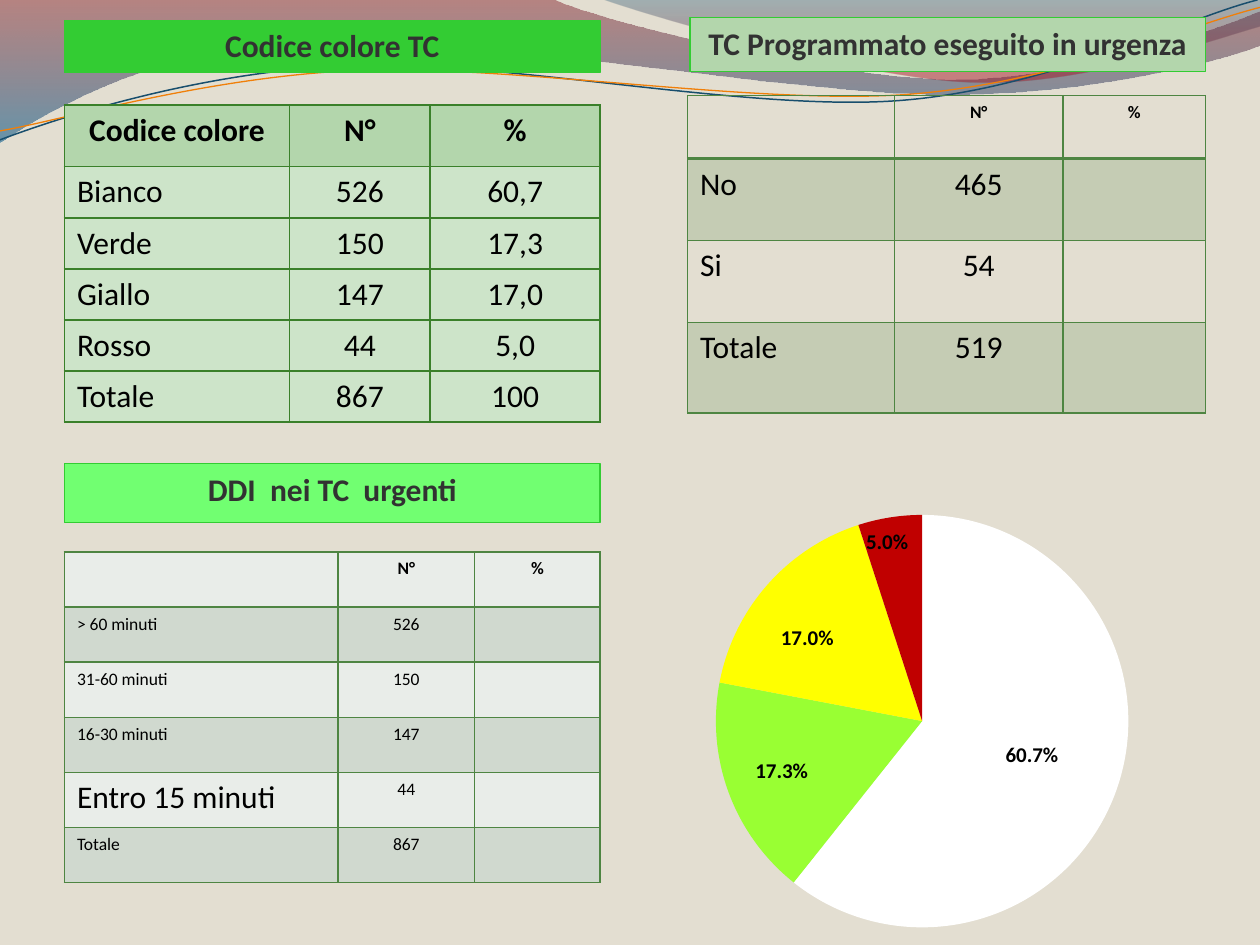
from lxml.etree import SubElement
from pptx import Presentation
from pptx.chart.data import CategoryChartData
from pptx.dml.color import RGBColor
from pptx.enum.chart import XL_CHART_TYPE as ChartType, XL_LABEL_POSITION as LabelPos
from pptx.enum.shapes import MSO_SHAPE as Shape
from pptx.enum.text import MSO_ANCHOR as Anchor, PP_ALIGN as Align
from pptx.oxml import parse_xml
from pptx.oxml.ns import nsdecls, qn
from pptx.util import Cm, Pt

THEME = dict(
    font="Calibri", chart_font="Cambria", large=18, label=12, small=10,
    background="E3DED1", text="000000", heading="323232", heading_line="33CC33",
    header="B3D6AC", body="CDE4C9", code_border="3A802A", border="4E8542",
    light="E9EDE9", dark="D0D9CF", blue="184E6D", orange="F07F09",
)

# Waves in cm: a pair is a corner, six numbers are a Bézier curve.
BANDS = [
    ([(0, 0), (11.18, 0), (12.09, 0.43, 16.87, 1.6, 19.25, 1.6),
      (21.67, 1.6, 24.33, 0.66, 25.4, 0.23), (25.4, 0.91),
      (24.97, 1.12, 22.1, 1.93, 18.95, 1.9), (15.8, 1.9, 9.7, 0.71, 6.53, 0.86),
      (3.28, 0.89, 1.17, 2.11, 0, 2.87)],
     [(0, "7E1621", 45), (100, "005689", 55)]),
    ([(12.17, 0), (12.93, 0.28, 17.32, 1.57, 19.53, 1.65),
      (21.74, 1.75, 24.41, 0.81, 25.4, 0.53), (25.4, 0)],
     [(0, "094467", 30), (80, "A10F1F", 45)]),
]
STRANDS = [
    ([(0, 2.82), (1.22, 2.36, 4.01, 1.45, 7.04, 1.32),
      (10.03, 1.19, 15.06, 2.26, 18.11, 2.03), (21.16, 1.8, 23.83, 0.38, 25.35, 0)],
     THEME["blue"], 0.85),
    ([(0, 2.64), (1.19, 2.44, 4.17, 1.55, 7.19, 1.42),
      (10.24, 1.3, 15.16, 2.11, 18.21, 1.91), (21.23, 1.7, 23.9, 0.53, 25.4, 0.15)],
     THEME["orange"], 0.75),
]
HEADINGS = [
    ("TC Programmato eseguito in urgenza", (13.91, 0.35, 10.39, 1.1), THEME["header"]),
    ("Codice colore TC", (1.3, 0.41, 10.8, 1.05), "33CC33"),
    ("DDI  nei TC  urgenti", (1.3, 9.35, 10.8, 1.19), "71FF71"),
]
# Fills are (colour, opacity %) for the header, odd and even rows.
CLEAR, TINT = (None, 0), (THEME["border"], 20)
LIGHT, DARK, BODY = (THEME["light"], 100), (THEME["dark"], 100), (THEME["body"], 100)
TABLES = [
    dict(at=(13.86, 1.93), cols=[4.17, 3.4, 2.87], heights=[1.27, 1.65, 1.65, 1.83],
         fills=(CLEAR, TINT, CLEAR), border=THEME["border"], rule=2,
         sizes=(THEME["small"], THEME["large"]),
         rows=[("", "N°", "%"), ("No", "465", ""), ("Si", "54", ""), ("Totale", "519", "")]),
    dict(at=(1.3, 2.12), cols=[4.54, 2.83, 3.43], heights=[1.24] + [1.03] * 5,
         fills=((THEME["header"], 100), BODY, BODY), border=THEME["code_border"], rule=1,
         sizes=(THEME["large"], THEME["large"]),
         rows=[("Codice colore", "N°", "%"), ("Bianco", "526", "60,7"),
               ("Verde", "150", "17,3"), ("Giallo", "147", "17,0"),
               ("Rosso", "44", "5,0"), ("Totale", "867", "100")]),
    dict(at=(1.3, 11.13), cols=[5.51, 2.76, 2.53], heights=[1.11] * 6,
         fills=(LIGHT, DARK, LIGHT), border=THEME["border"], rule=1,
         sizes=(THEME["small"], THEME["small"]), enlarged="Entro 15 minuti",
         rows=[("", "N°", "%"), ("> 60 minuti", "526", ""), ("31-60 minuti", "150", ""),
               ("16-30 minuti", "147", ""), ("Entro 15 minuti", "44", ""),
               ("Totale", "867", "")]),
]
PIE_AT = (12.29, 9.35, 12.6, 9.7)
PIE_PLOT = dict(x=0.17, y=0.1, w=0.66, h=0.87)
# Category, share, colour, label position, label offset as a part of the chart
SLICES = [
    ("1", 0.607, "FFFFFF", LabelPos.CENTER, (0.02, 0)),
    ("2", 0.173, "99FF33", LabelPos.CENTER, (-0.07, 0.03)),
    ("3", 0.17, "FFFF00", LabelPos.CENTER, (-0.06, -0.03)),
    ("4", 0.05, "C00000", LabelPos.INSIDE_END, (-0.04, 0.01)),
]


def rgb(value):
    return RGBColor.from_string(value)


def style_font(font, size, color=THEME["text"], bold=False, name=THEME["font"]):
    font.size, font.bold, font.name = Pt(size), bold, name
    font.color.rgb = rgb(color)


def write(tf, text, align=Align.LEFT, **fmt):
    p = tf.paragraphs[0]
    p.alignment = align
    r = p.add_run()
    r.text = text
    style_font(r.font, **fmt)


def add_wave(s, segments, close):
    """Build through corners and control points, then join the latter into curves."""
    points = [(Cm(seg[k]), Cm(seg[k + 1])) for seg in segments for k in range(0, len(seg), 2)]
    builder = s.shapes.build_freeform(*points[0])
    builder.add_line_segments(points[1:], close=close)
    sp = builder.convert_to_shape()
    sp.shadow.inherit = False
    sp.fill.background()
    lines = iter(list(sp._element.iter(qn("a:lnTo"))))
    for seg in segments[1:]:
        line = next(lines)
        if len(seg) == 6:
            line.tag = qn("a:cubicBezTo")
            for _ in range(2):
                extra = next(lines)
                line.append(extra[0])
                extra.getparent().remove(extra)
    return sp


def add_band(s, segments, stops):
    sp = add_wave(s, segments, True)
    sp.line.fill.background()
    marks = "".join(
        f'<a:gs pos="{pos * 1000}"><a:srgbClr val="{color}">'
        f'<a:alpha val="{alpha * 1000}"/></a:srgbClr></a:gs>' for pos, color, alpha in stops)
    no_fill = sp._element.spPr.find(qn("a:noFill"))
    no_fill.getparent().replace(no_fill, parse_xml(
        f'<a:gradFill {nsdecls("a")}><a:gsLst>{marks}</a:gsLst>'
        '<a:lin ang="5400000" scaled="0"/></a:gradFill>'))


def add_heading(s, text, box, color):
    sp = s.shapes.add_shape(Shape.RECTANGLE, *map(Cm, box))
    sp.shadow.inherit = False
    sp.fill.solid()
    sp.fill.fore_color.rgb = rgb(color)
    sp.line.color.rgb, sp.line.width = rgb(THEME["heading_line"]), Pt(0.75)
    tf = sp.text_frame
    tf.word_wrap, tf.vertical_anchor = True, Anchor.TOP
    write(tf, text, Align.CENTER, size=THEME["large"], color=THEME["heading"], bold=True)


def style_cell(cell, fill, border, widths):
    """Draw the borders, widths given per side, then the fill."""
    tcPr = cell._tc.get_or_add_tcPr()
    for side, width in widths.items():
        tcPr.append(parse_xml(
            f'<a:ln{side} {nsdecls("a")} w="{Pt(width)}"><a:solidFill>'
            f'<a:srgbClr val="{border}"/></a:solidFill></a:ln{side}>'))
    color, alpha = fill
    if color is None:
        cell.fill.background()
        return
    cell.fill.solid()
    cell.fill.fore_color.rgb = rgb(color)
    if alpha < 100:
        clr = tcPr.find(qn("a:solidFill")).find(qn("a:srgbClr"))
        SubElement(clr, qn("a:alpha")).set("val", str(alpha * 1000))


def add_data_table(s, at, cols, heights, fills, border, rule, sizes, rows, enlarged=None):
    table = s.shapes.add_table(len(rows), len(cols), *map(Cm, at),
                               Cm(sum(cols)), Cm(sum(heights))).table
    table.first_row = table.horz_banding = False
    for col, width in zip(table.columns, cols):
        col.width = Cm(width)
    for i, (row, height) in enumerate(zip(rows, heights)):
        table.rows[i].height = Cm(height)
        fill = fills[0] if i == 0 else fills[2 - i % 2]
        widths = dict(L=1, R=1, T=rule if i == 1 else 1, B=rule if i == 0 else 1)
        for j, text in enumerate(row):
            cell = table.cell(i, j)
            style_cell(cell, fill, border, widths)
            if text:
                size = THEME["large"] if text == enlarged else sizes[i > 0]
                write(cell.text_frame, text, Align.CENTER if j or i == 0 else Align.LEFT,
                      size=size, bold=i == 0)


def layout_xml(target="", **values):
    marks = "".join(f'<c:{key} val="{value}"/>' for key, value in values.items())
    return parse_xml(f'<c:layout {nsdecls("c")}><c:manualLayout>{target}{marks}'
                     '</c:manualLayout></c:layout>')


def add_pie(s):
    data = CategoryChartData(number_format="0.0%")
    data.categories = [row[0] for row in SLICES]
    data.add_series("Series 1", [row[1] for row in SLICES])
    chart = s.shapes.add_chart(ChartType.PIE, *map(Cm, PIE_AT), data).chart
    chart.has_legend = chart.has_title = False
    style_font(chart.font, THEME["large"], name=THEME["chart_font"])
    plot = chart.plots[0]
    plot.vary_by_categories = False
    series = plot.series[0]
    for i, (_, _, color, position, _) in enumerate(SLICES):
        point = series.points[i]
        point.format.fill.solid()
        point.format.fill.fore_color.rgb = rgb(color)
        point.format.line.fill.background()
        style_font(point.data_label.font, THEME["label"], bold=True)
        point.data_label.position = position
    for label, (*_, (dx, dy)) in zip(series._element.iter(qn("c:dLbl")), SLICES):
        label.insert(1, layout_xml(x=dx, y=dy))
    area = chart._chartSpace.chart.plotArea
    for old in area.findall(qn("c:layout")):
        area.remove(old)
    area.insert(0, layout_xml('<c:layoutTarget val="inner"/><c:xMode val="edge"/>'
                              '<c:yMode val="edge"/>', **PIE_PLOT))


def main():
    prs = Presentation()
    prs.slide_width, prs.slide_height = Cm(25.4), Cm(19.05)
    s = prs.slides.add_slide(prs.slide_layouts[6])
    s.background.fill.solid()
    s.background.fill.fore_color.rgb = rgb(THEME["background"])
    for segments, stops in BANDS:
        add_band(s, segments, stops)
    for segments, color, width in STRANDS:
        line = add_wave(s, segments, False).line
        line.color.rgb, line.width = rgb(color), Pt(width)
    for table, heading in zip(TABLES, HEADINGS):
        add_data_table(s, **table)
        add_heading(s, *heading)
    add_pie(s)
    prs.save("out.pptx")


if __name__ == "__main__":
    main()
